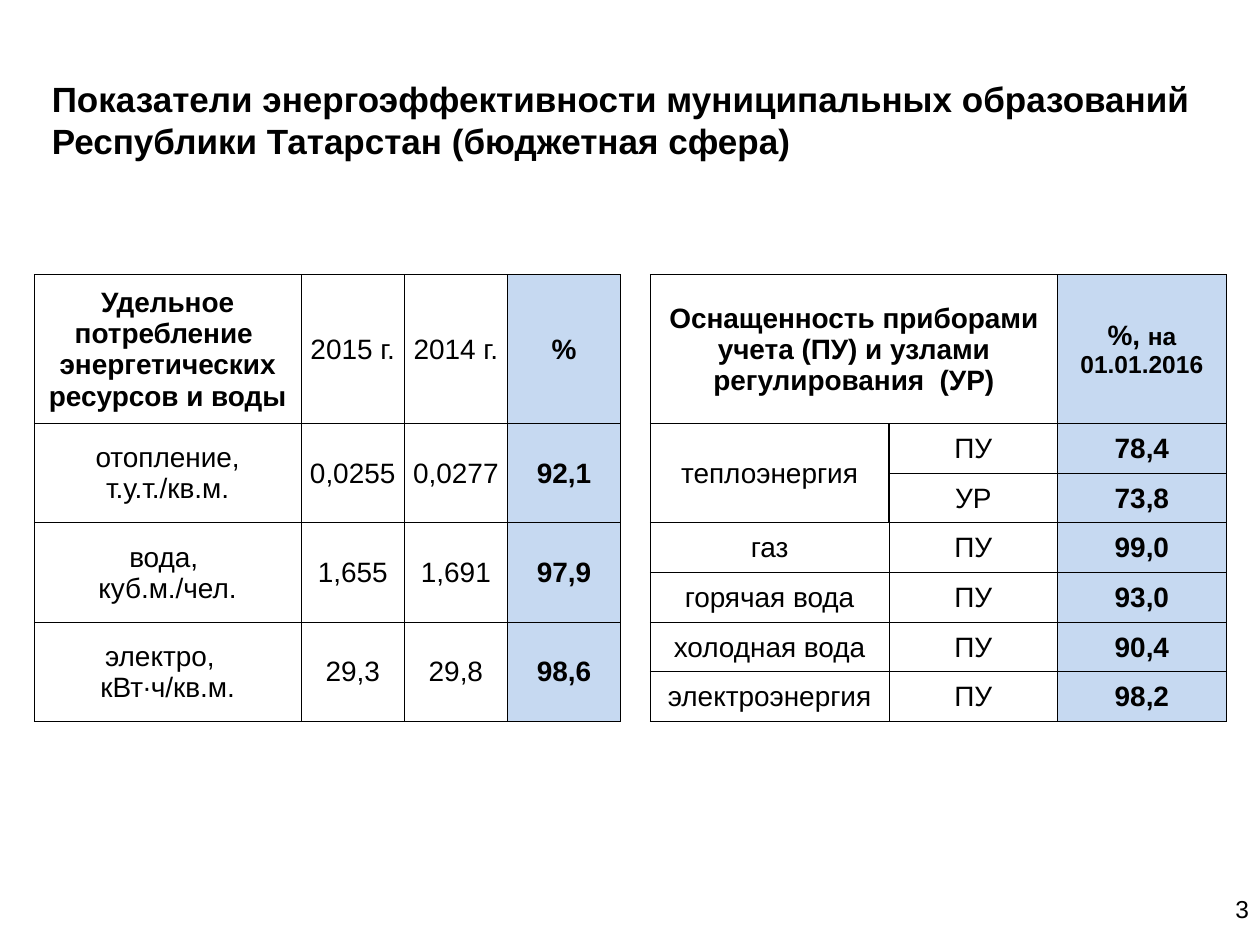
import lxml.etree
import pptx
import pptx.dml.color
import pptx.enum.text
import pptx.oxml.ns
import pptx.util

Cm = pptx.util.Cm
Pt = pptx.util.Pt
ALIGN = pptx.enum.text.PP_ALIGN
MIDDLE = pptx.enum.text.MSO_ANCHOR.MIDDLE
BLACK = pptx.dml.color.RGBColor(0x00, 0x00, 0x00)
LIGHT_BLUE = pptx.dml.color.RGBColor(0xC6, 0xD9, 0xF1)
FONT_NAME = "Arial"
TABLE_TOP = 5.54

CONSUMPTION = [
    ["Удельное потребление \nэнергетических ресурсов и воды", "2015 г.", "2014 г.", "%"],
    ["отопление,\nт.у.т./кв.м.", "0,0255", "0,0277", "92,1"],
    ["вода, \nкуб.м./чел.", "1,655", "1,691", "97,9"],
    ["электро,  \nкВт∙ч/кв.м.", "29,3", "29,8", "98,6"],
]
METERING = [
    ["Оснащенность приборами учета (ПУ) и узлами регулирования  (УР)", "", "%, "],
    ["теплоэнергия", "ПУ", "78,4"],
    ["", "УР", "73,8"],
    ["газ", "ПУ", "99,0"],
    ["горячая вода", "ПУ", "93,0"],
    ["холодная вода", "ПУ", "90,4"],
    ["электроэнергия", "ПУ", "98,2"],
]


def write_text(text_frame, text, size, bold, alignment):
    """Write one formatted paragraph into a text frame."""
    paragraph = text_frame.paragraphs[0]
    paragraph.text = text
    paragraph.alignment = alignment
    paragraph.font.name = FONT_NAME
    paragraph.font.size = Pt(size)
    paragraph.font.bold = bold
    paragraph.font.color.rgb = BLACK
    return paragraph


def set_borders(cell, thick_sides=""):
    """Draw thin black borders, with 1 pt lines on the thick sides."""
    properties = cell._tc.get_or_add_tcPr()
    for side in "LRTB":
        width = Pt(1 if side in thick_sides else 0.5)
        line = lxml.etree.SubElement(
            properties, pptx.oxml.ns.qn(f"a:ln{side}"), w=str(int(width)))
        fill = lxml.etree.SubElement(line, pptx.oxml.ns.qn("a:solidFill"))
        lxml.etree.SubElement(fill, pptx.oxml.ns.qn("a:srgbClr"), val=str(BLACK))


def format_cell(cell, text, bold, highlighted, thick_sides):
    """Fill in one table cell with its text, borders and background."""
    cell.margin_left = cell.margin_right = cell.margin_top = Cm(0.02)
    cell.margin_bottom = 0
    cell.vertical_anchor = MIDDLE
    write_text(cell.text_frame, text, 16, bold, ALIGN.CENTER)
    set_borders(cell, thick_sides)
    if highlighted:
        cell.fill.solid()
        cell.fill.fore_color.rgb = LIGHT_BLUE
    else:
        cell.fill.background()


def add_indicator_table(slide, left, values, column_widths, row_heights, thick_borders):
    """Add a table whose last column is bold and highlighted."""
    table = slide.shapes.add_table(
        len(values), len(column_widths), Cm(left), Cm(TABLE_TOP),
        Cm(sum(column_widths)), Cm(sum(row_heights))).table
    table.first_row = table.horz_banding = False
    for column, width in zip(table.columns, column_widths):
        column.width = Cm(width)
    for row, height in zip(table.rows, row_heights):
        row.height = Cm(height)
    last = len(column_widths) - 1
    for i, texts in enumerate(values):
        for j, text in enumerate(texts):
            bold = j == last or (i, j) == (0, 0)
            format_cell(table.cell(i, j), text, bold, j == last,
                        thick_borders.get((i, j), ""))
    return table


def add_title(slide, text):
    """Place and format the title placeholder."""
    title = slide.shapes.title
    title.left, title.top, title.width, title.height = Cm(0.79), Cm(1.4), Cm(24), Cm(2)
    title.text_frame.auto_size = pptx.enum.text.MSO_AUTO_SIZE.NONE
    title.text_frame.vertical_anchor = MIDDLE
    write_text(title.text_frame, text, 20, True, ALIGN.LEFT)


def add_page_number(slide, number):
    """Add the page number in the bottom right corner."""
    text_frame = slide.shapes.add_textbox(
        Cm(24.31), Cm(17.81), Cm(1.12), Cm(1.02)).text_frame
    text_frame.word_wrap = True
    text_frame.vertical_anchor = MIDDLE
    write_text(text_frame, number, 14, False, ALIGN.RIGHT)


def main():
    """Build the energy efficiency slide."""
    presentation = pptx.Presentation()
    presentation.slide_width, presentation.slide_height = Cm(25.4), Cm(19.05)
    slide = presentation.slides.add_slide(presentation.slide_layouts[5])
    add_title(slide, "Показатели энергоэффективности муниципальных образований "
                     "Республики Татарстан (бюджетная сфера)")
    add_page_number(slide, "3")
    add_indicator_table(slide, 0.69, CONSUMPTION, [5.38, 2.08, 2.08, 2.28],
                        [3] + [2] * 3, {})
    metering = add_indicator_table(
        slide, 13.11, METERING, [4.81, 3.4, 3.4], [3] + [1] * 6,
        {(0, 1): "R", (0, 2): "L", (1, 0): "R", (1, 1): "L", (2, 0): "R", (2, 1): "L"})
    metering.cell(0, 0).merge(metering.cell(0, 1))
    metering.cell(1, 0).merge(metering.cell(2, 0))
    date = metering.cell(0, 2).text_frame.paragraphs[0].add_run()
    date.text = "на 01.01.2016"
    date.font.size = Pt(14)
    presentation.save("out.pptx")


if __name__ == "__main__":
    main()
